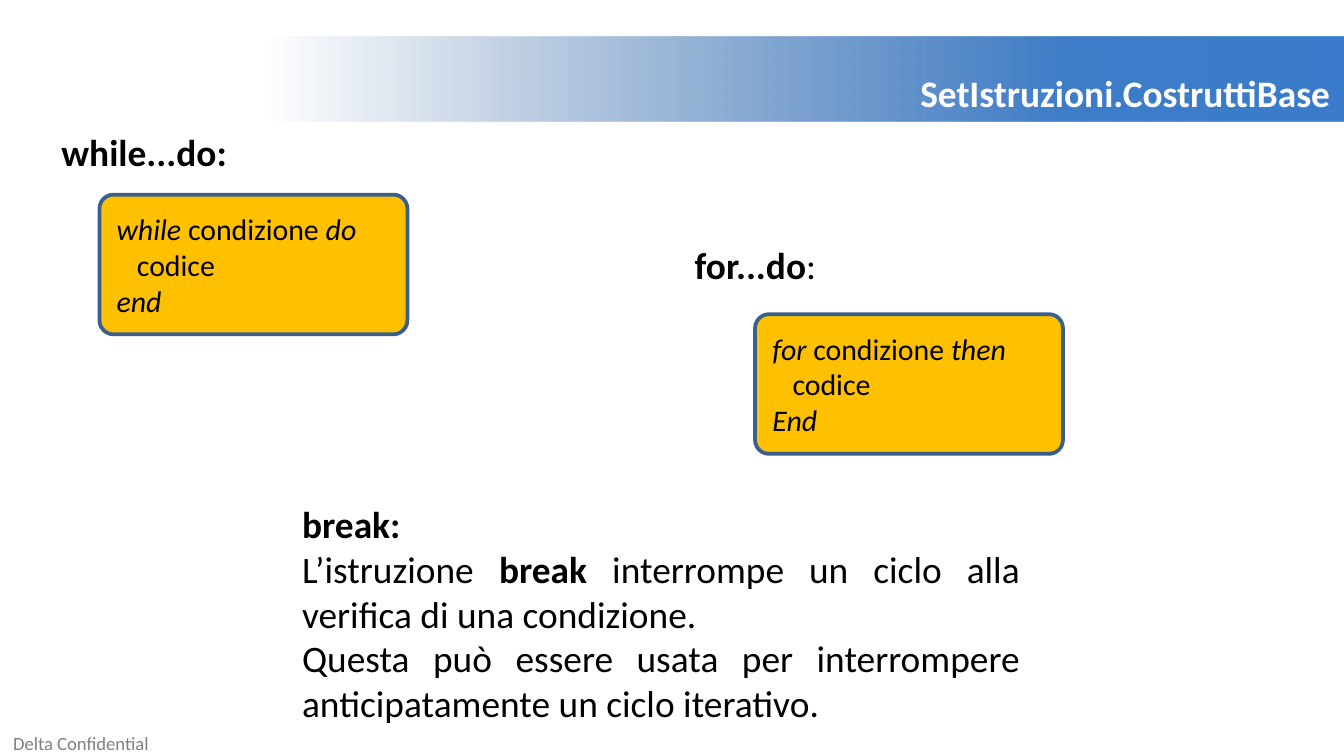
from lxml import etree
from pptx import Presentation
from pptx.dml.color import RGBColor
from pptx.enum import shapes, text
from pptx.oxml import ns
from pptx.util import Cm, Pt

FONT = "Calibri"
BLACK = RGBColor(0x00, 0x00, 0x00)
WHITE = RGBColor(0xFF, 0xFF, 0xFF)
GREY = RGBColor(0x80, 0x80, 0x80)
AMBER = RGBColor(0xFF, 0xC0, 0x00)
OUTLINE = RGBColor(0x3A, 0x5F, 0x8C)

# Content: each paragraph is a list of (text, style), "b" bold, "i" italic
TITLE = "SetIstruzioni.CostruttiBase"
FOOTER = "Delta Confidential"
# Banner gradient: (position %, colour, opacity %)
BANNER_STOPS = [(20, "2F5F99", 0), (80, "3D7CC7", 100), (100, "3A7CCB", 100)]

# Text blocks: (left, top, width, height) in cm, paragraphs
TEXT_BLOCKS = [
    ((12.88, 4.45, 8.64, 1.12), [[("for...do", "b"), (":", "")]]),
    ((0.91, 2.31, 8.64, 1.12), [[("while...do:", "b")]]),
    ((5.46, 9.35, 14.07, 4.52), [
        [("break:", "b")],
        [("L’istruzione ", ""), ("break", "b"),
         (" interrompe un ciclo alla verifica di una condizione.", "")],
        [("Questa può essere usata per interrompere anticipatamente un ciclo iterativo.", "")],
    ]),
]

# Code boxes: (left, top) in cm, opening word, closing word, end word
CODE_SIZE = (5.82, 2.64)
CODE_BOXES = [
    ((1.88, 3.68), "while", "do", "end"),
    ((14.27, 5.94), "for", "then", "End"),
]


def write(shape, paragraphs, size):
    """Fill a shape with justified paragraphs of styled runs."""
    frame = shape.text_frame
    frame.word_wrap = True
    for index, runs in enumerate(paragraphs):
        paragraph = frame.add_paragraph() if index else frame.paragraphs[0]
        paragraph.alignment = text.PP_ALIGN.JUSTIFY
        paragraph.font.name = FONT
        paragraph.font.size = Pt(size)
        paragraph.font.color.rgb = BLACK
        for words, style in runs:
            run = paragraph.add_run()
            run.text = words
            run.font.name = FONT
            run.font.size = Pt(size)
            run.font.color.rgb = BLACK
            run.font.bold = "b" in style
            run.font.italic = "i" in style


def place(shape, left, top, width, height):
    shape.left, shape.top = Cm(left), Cm(top)
    shape.width, shape.height = Cm(width), Cm(height)


def fill_gradient(shape, stops):
    """Left-to-right gradient with an opacity for each stop."""
    shape.fill.gradient()
    shape.fill.gradient_angle = 0
    stop_list = shape.element.spPr.find(".//" + ns.qn("a:gsLst"))
    for old_stop in list(stop_list):
        stop_list.remove(old_stop)
    for position, colour, opacity in stops:
        stop = etree.SubElement(stop_list, ns.qn("a:gs"), pos=str(position * 1000))
        tone = etree.SubElement(stop, ns.qn("a:srgbClr"), val=colour)
        etree.SubElement(tone, ns.qn("a:alpha"), val=str(opacity * 1000))


presentation = Presentation()
presentation.slide_width, presentation.slide_height = Cm(25.4), Cm(14.29)
slide = presentation.slides.add_slide(presentation.slide_layouts[5])

# Title banner
title = slide.shapes.title
place(title, 0, 0.7, 25.4, 1.6)
fill_gradient(title, BANNER_STOPS)
title.text_frame.text = TITLE
title.text_frame.auto_size = text.MSO_AUTO_SIZE.NONE
title.text_frame.vertical_anchor = text.MSO_ANCHOR.BOTTOM
paragraph = title.text_frame.paragraphs[0]
paragraph.alignment = text.PP_ALIGN.RIGHT
paragraph.font.name = FONT
paragraph.font.size = Pt(20)
paragraph.font.bold = True
paragraph.font.color.rgb = WHITE

# Footer
footer = slide.shapes.add_textbox(Cm(0.25), Cm(13.79), Cm(4.6), Cm(0.51))
frame = footer.text_frame
frame.word_wrap = True
frame.margin_left = frame.margin_right = frame.margin_top = frame.margin_bottom = 0
frame.vertical_anchor = text.MSO_ANCHOR.MIDDLE
frame.text = FOOTER
paragraph = frame.paragraphs[0]
paragraph.font.name = FONT
paragraph.font.size = Pt(10)
paragraph.font.color.rgb = GREY

# Headings and explanation
for box, paragraphs in TEXT_BLOCKS:
    block = slide.shapes.add_textbox(*map(Cm, box))
    write(block, paragraphs, 20)
    block.text_frame.auto_size = text.MSO_AUTO_SIZE.SHAPE_TO_FIT_TEXT

# Code boxes
for corner, opening, closing, end in CODE_BOXES:
    code = slide.shapes.add_shape(
        shapes.MSO_SHAPE.ROUNDED_RECTANGLE, *map(Cm, corner + CODE_SIZE))
    code.adjustments[0] = 0.1
    code.shadow.inherit = False
    code.fill.solid()
    code.fill.fore_color.rgb = AMBER
    code.line.color.rgb = OUTLINE
    code.line.width = Pt(2)
    code.text_frame.vertical_anchor = text.MSO_ANCHOR.MIDDLE
    write(code, [
        [(opening + " ", "i"), ("condizione", ""), (" " + closing, "i")],
        [("   ", "i"), ("codice", "")],
        [(end, "i")],
    ], 16)

presentation.save("out.pptx")
